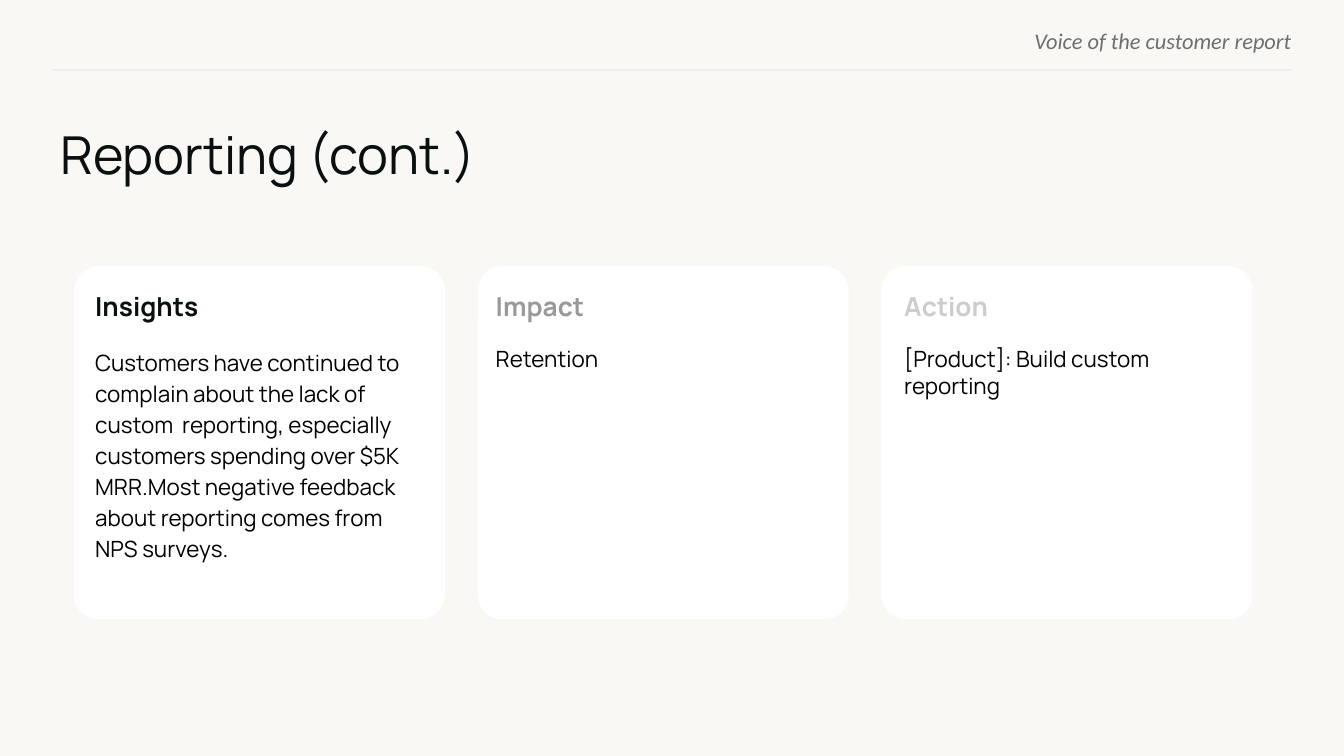
"""Build the customer reporting slide with its three cards."""
from lxml.etree import SubElement
from pptx import Presentation
from pptx.dml.color import RGBColor
from pptx.enum.shapes import MSO_CONNECTOR, MSO_SHAPE
from pptx.enum.text import MSO_ANCHOR, MSO_AUTO_SIZE, PP_ALIGN
from pptx.oxml.ns import qn
from pptx.util import Cm, Pt

COLORS = {
    "background": "F9F8F5",
    "card": "FFFFFF",
    "rule": "EFEFEF",
    "header": "6C706F",
    "ink": "09100F",
    "body": "000000",
    "impact": "999999",
    "action": "CCCCCC",
}

CARD_LEFT, CARD_TOP, CARD_WIDTH, CARD_HEIGHT = 1.4, 5.03, 7.01, 6.68
CARD_STEP = 7.63
HEADING_TOP, BODY_TOP = 5.49, 6.53

CARDS = [
    {"heading": "Insights", "color": "ink", "inset": 0.4, "width": 6.2, "spacing": 1.15,
     "body": "Customers have continued to complain about the lack of custom  reporting, "
             "especially customers spending over $5K MRR.Most negative feedback about "
             "reporting comes from NPS surveys."},
    {"heading": "Impact", "color": "impact", "inset": 0.34, "width": 5.8, "spacing": 1,
     "body": "Retention"},
    {"heading": "Action", "color": "action", "inset": 0.43, "width": 5.69, "spacing": 1,
     "body": "[Product]: Build custom reporting"},
]


def rgb(name):
    return RGBColor.from_string(COLORS[name])


def write_text(frame, text, size=12, font="Manrope", color="body", bold=False,
               italic=False, align=PP_ALIGN.LEFT, spacing=1):
    frame.word_wrap = True
    frame.auto_size = MSO_AUTO_SIZE.NONE
    frame.vertical_anchor = MSO_ANCHOR.TOP
    frame.margin_left = frame.margin_top = frame.margin_right = frame.margin_bottom = 0
    paragraph = frame.paragraphs[0]
    paragraph.alignment = align
    paragraph.line_spacing = spacing
    run = paragraph.add_run()
    run.text = text
    run.font.size = Pt(size)
    run.font.name = font
    run.font.bold = bold
    run.font.italic = italic
    run.font.color.rgb = rgb(color)


class SlideBuilder:
    """Hold the slide and draw each kind of element in its style."""

    def __init__(self, presentation):
        self.slide = presentation.slides.add_slide(presentation.slide_layouts[5])
        fill = self.slide.background.fill
        fill.solid()
        fill.fore_color.rgb = rgb("background")

    def title(self, text, left, top, width, height):
        shape = self.slide.shapes.title
        shape.left, shape.top, shape.width, shape.height = map(Cm, (left, top, width, height))
        write_text(shape.text_frame, text, size=28, color="ink")

    def text(self, text, left, top, width, height, **text_format):
        shape = self.slide.shapes.add_textbox(*map(Cm, (left, top, width, height)))
        write_text(shape.text_frame, text, **text_format)

    def rule(self, left, right, top):
        connector = self.slide.shapes.add_connector(
            MSO_CONNECTOR.STRAIGHT, Cm(left), Cm(top), Cm(right), Cm(top))
        connector.line.color.rgb = rgb("rule")
        connector.line.width = Pt(0.75)
        SubElement(connector.element.spPr, qn("a:effectLst"))

    def panel(self, left, top, width, height):
        shape = self.slide.shapes.add_shape(
            MSO_SHAPE.ROUNDED_RECTANGLE, *map(Cm, (left, top, width, height)))
        shape.adjustments[0] = 0.07
        shape.shadow.inherit = False
        shape.fill.solid()
        shape.fill.fore_color.rgb = rgb("card")
        shape.line.fill.background()

    def card(self, left, card):
        self.panel(left, CARD_TOP, CARD_WIDTH, CARD_HEIGHT)
        text_left = left + card["inset"]
        self.text(card["heading"], text_left, HEADING_TOP, card["width"], 0.84,
                  size=14, color=card["color"], bold=True)
        self.text(card["body"], text_left, BODY_TOP, card["width"], 4.5,
                  spacing=card["spacing"])


def main():
    presentation = Presentation()
    presentation.slide_width = Cm(25.4)
    presentation.slide_height = Cm(14.29)
    builder = SlideBuilder(presentation)
    builder.text("Voice of the customer report", 14.63, 0.51, 9.78, 0.46,
                 font="Calibri", color="header", italic=True, align=PP_ALIGN.RIGHT)
    builder.rule(0.99, 24.41, 1.32)
    builder.title("Reporting (cont.)", 1.14, 2.31, 23.44, 1.3)
    for index, card in enumerate(CARDS):
        builder.card(CARD_LEFT + index * CARD_STEP, card)
    presentation.save("out.pptx")


if __name__ == "__main__":
    main()
